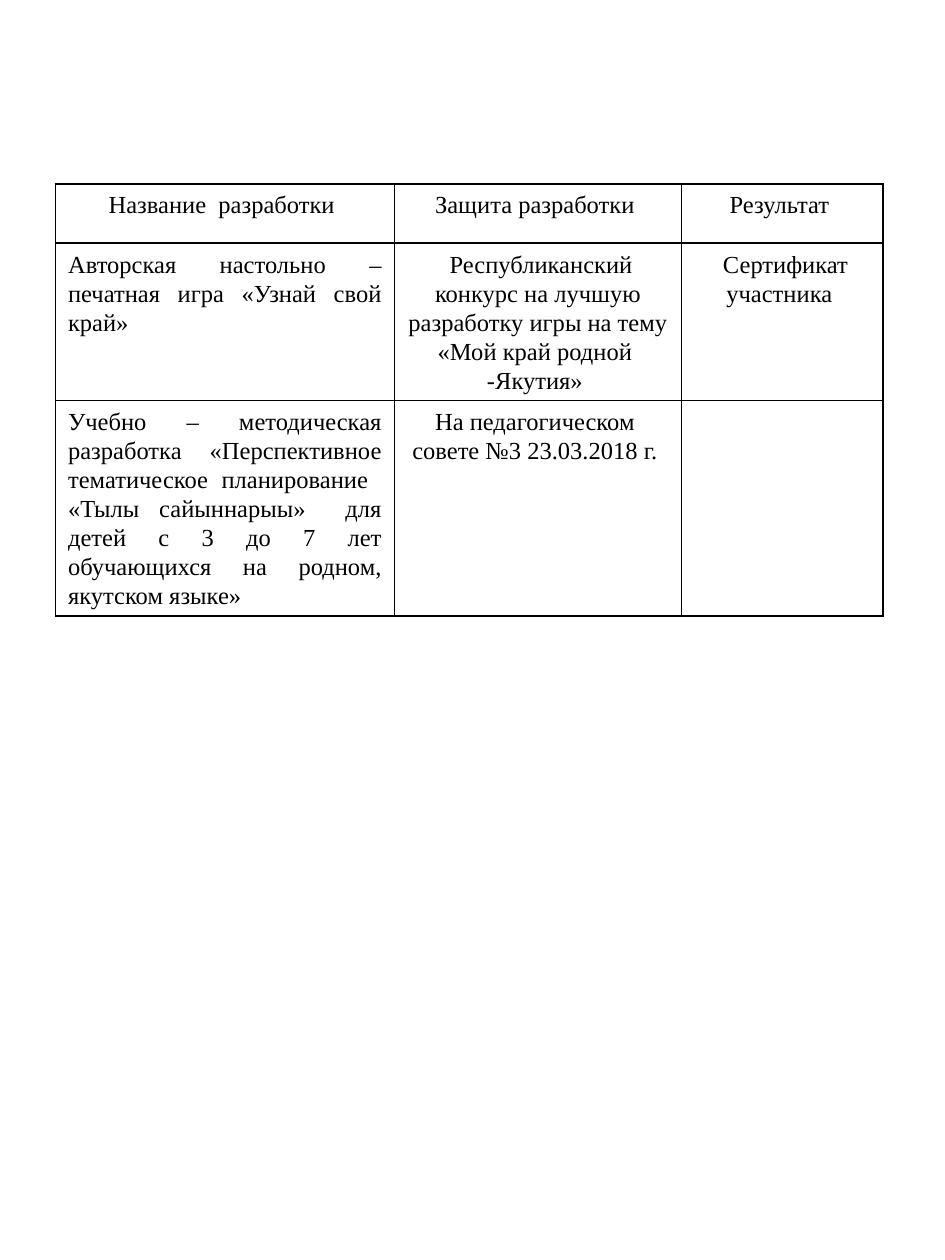
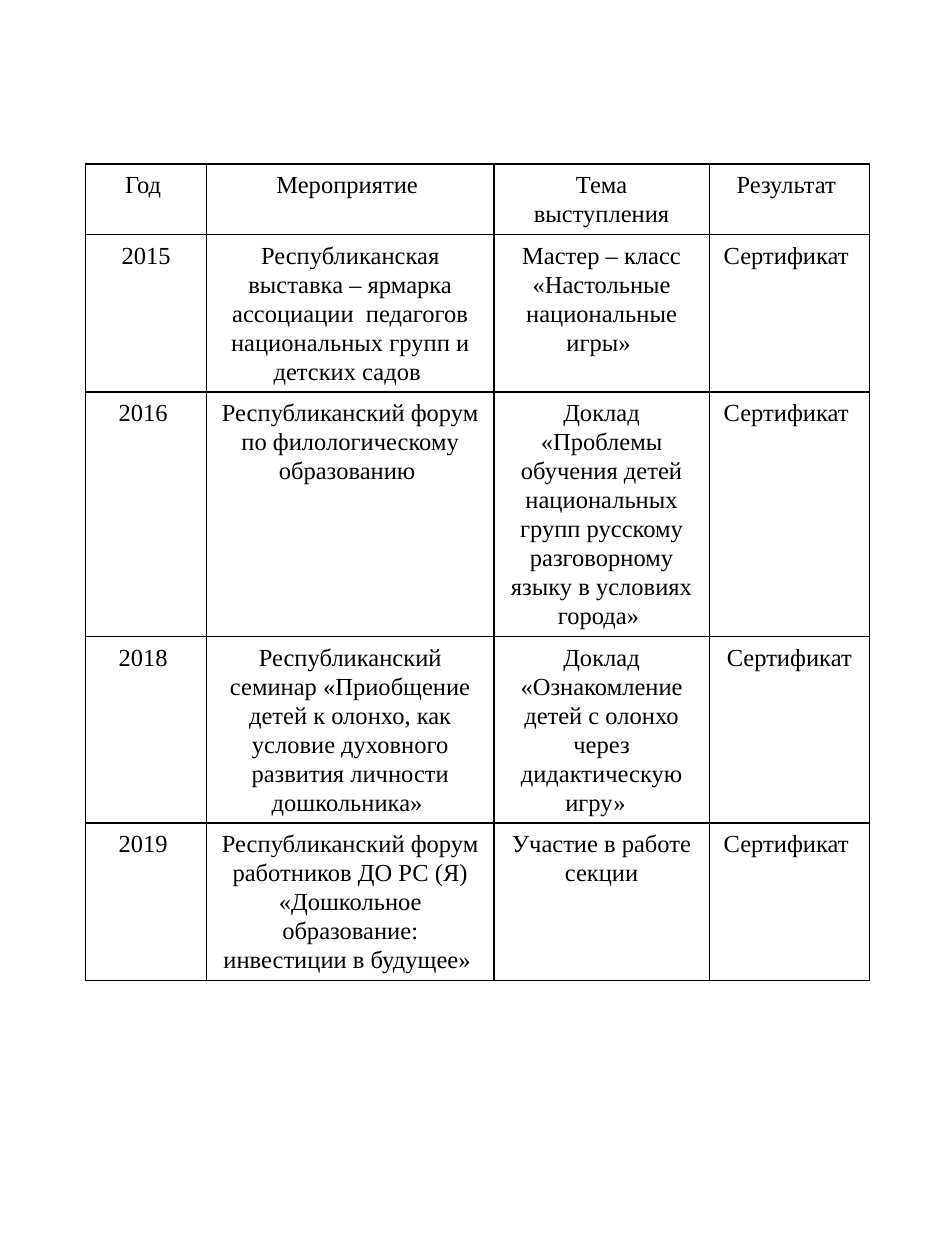
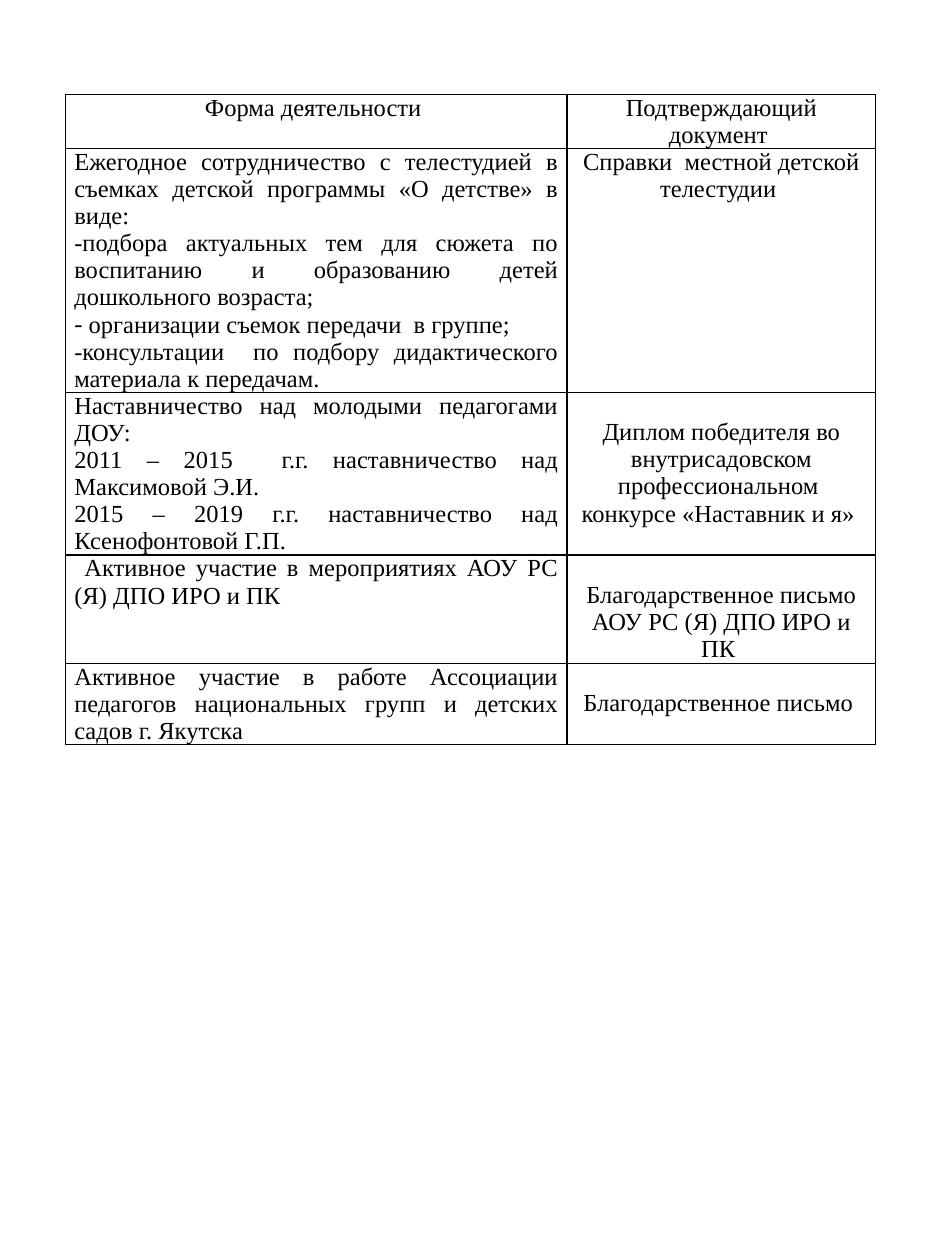
from lxml import etree
from pptx import Presentation
from pptx.dml.color import RGBColor
from pptx.enum.text import PP_ALIGN
from pptx.oxml.ns import qn
from pptx.util import Inches, Pt

CENTER = PP_ALIGN.CENTER
JUSTIFY = PP_ALIGN.JUSTIFY
FONT = "Times New Roman"
BLACK = "000000"
TEXT_SIZE = 14
BORDER_WIDTH = 1
BLANK_LAYOUT = 6
LINE_OFFSET = 0.21

DEVELOPMENTS = [
    ["Название  разработки ", "Защита разработки ", "Результат "],
    ["Авторская настольно – печатная игра «Узнай свой край»",
     " Республиканский конкурс на лучшую разработку игры на тему «Мой край родной  -Якутия» ",
     " Сертификат участника "],
    ["Учебно – методическая разработка  «Перспективное тематическое планирование  "
     "«Тылы сайыннарыы»  для детей с 3 до 7 лет обучающихся на родном, якутском языке» ",
     "На педагогическом  совете №3 23.03.2018 г. ", ""],
]

EVENTS = [
    ["Год ", "Мероприятие ", "Тема выступления", "Результат "],
    ["2015",
     "Республиканская выставка – ярмарка ассоциации  педагогов национальных групп и детских садов ",
     "Мастер – класс «Настольные национальные игры» ", "Сертификат "],
    ["2016 ", "Республиканский форум по филологическому образованию ",
     "Доклад «Проблемы обучения детей национальных групп русскому разговорному языку "
     "в условиях города» ", "Сертификат "],
    ["2018 ",
     "Республиканский семинар «Приобщение детей к олонхо, как условие духовного развития "
     "личности дошкольника» ",
     "Доклад «Ознакомление детей с олонхо через дидактическую игру»  ", "Сертификат"],
    ["2019 ",
     "Республиканский форум работников ДО РС (Я) «Дошкольное образование: инвестиции в будущее» ",
     "Участие в работе секции", "Сертификат "],
]

ACTIVITIES = [
    ["Форма деятельности ", "Подтверждающий документ "],
    ["Ежегодное сотрудничество с телестудией в съемках детской программы «О детстве» в виде: \n"
     "-подбора актуальных тем для сюжета по воспитанию и образованию детей дошкольного возраста;\n"
     "- организации съемок передачи  в группе;\n"
     "-консультации  по подбору дидактического материала к передачам.  ",
     "Справки  местной детской телестудии "],
    ["Наставничество над молодыми педагогами ДОУ:\n"
     "2011 – 2015  г.г. наставничество над Максимовой Э.И. \n"
     "2015 – 2019 г.г. наставничество над Ксенофонтовой Г.П.",
     "Диплом победителя во внутрисадовском профессиональном  конкурсе «Наставник и я» "],
    [" Активное участие в мероприятиях АОУ РС (Я) ДПО ИРО и ПК  ",
     "Благодарственное письмо АОУ РС (Я) ДПО ИРО и ПК "],
    ["Активное участие в работе Ассоциации педагогов национальных групп и детских садов г. Якутска ",
     "Благодарственное письмо "],
]


def rgb(color):
    """Turn a hex string into a colour."""
    return RGBColor.from_string(color)


def set_borders(cell, color=BLACK):
    """Draw a solid line on all four sides of a cell."""
    tc_pr = cell._tc.get_or_add_tcPr()
    for i, side in enumerate(("a:lnL", "a:lnR", "a:lnT", "a:lnB")):
        ln = etree.Element(qn(side), w=str(Pt(BORDER_WIDTH)))
        fill = etree.SubElement(ln, qn("a:solidFill"))
        etree.SubElement(fill, qn("a:srgbClr"), val=color)
        tc_pr.insert(i, ln)


def set_dash_bullet(p):
    """Give a paragraph a dash bullet without an indent."""
    p_pr = p._p.get_or_add_pPr()
    p_pr.set("marL", "0")
    p_pr.set("indent", "0")
    etree.SubElement(p_pr, qn("a:buFont"), typeface=FONT)
    etree.SubElement(p_pr, qn("a:buChar"), char="-")


def write_cell(cell, text, align, line_spacing, space_after):
    """Write one paragraph per line; a leading dash becomes a bullet."""
    tf = cell.text_frame
    for i, line in enumerate(text.split("\n")):
        p = tf.add_paragraph() if i else tf.paragraphs[0]
        p.alignment = align
        p.line_spacing = line_spacing
        p.space_after = Pt(space_after)
        if line.startswith("-"):
            set_dash_bullet(p)
            line = line[1:]
        r = p.add_run()
        r.text = line
        r.font.name = FONT
        r.font.size = Pt(TEXT_SIZE)
        r.font.color.rgb = rgb(BLACK)


def add_grid(prs, rows, left, top, widths, heights, justify_first=True,
             line_spacing=1.07, space_after=8):
    """Add a slide with one plain bordered table and return the table."""
    slide = prs.slides.add_slide(prs.slide_layouts[BLANK_LAYOUT])
    table = slide.shapes.add_table(
        len(rows), len(widths), Inches(left), Inches(top),
        Inches(sum(widths)), Inches(sum(heights))).table
    table.first_row = table.horz_banding = False
    for column, width in zip(table.columns, widths):
        column.width = Inches(width)
    for i, (row, height) in enumerate(zip(rows, heights)):
        table.rows[i].height = Inches(height)
        for j, text in enumerate(row):
            cell = table.cell(i, j)
            cell.fill.background()
            set_borders(cell)
            align = JUSTIFY if justify_first and i and j == 0 else CENTER
            if text:
                write_cell(cell, text, align, line_spacing, space_after)
    return table


def set_tight_margins(table):
    """Narrow the cell margins and start the last documents one line lower."""
    for cell in table.iter_cells():
        cell.margin_left = cell.margin_right = Inches(0.07)
        cell.margin_top = cell.margin_bottom = 0
    for i in range(2, len(table.rows)):
        table.cell(i, 1).margin_top = Inches(LINE_OFFSET)


def main():
    """Build the three table slides."""
    prs = Presentation()
    prs.slide_width, prs.slide_height = Inches(7.5), Inches(10)
    add_grid(prs, DEVELOPMENTS, 0.44, 1.46, [2.69, 2.28, 1.6], [0.47, 1.25, 1.71])
    add_grid(prs, EVENTS, 0.68, 1.3, [0.96, 2.28, 1.71, 1.27],
             [0.56, 1.25, 1.94, 1.48, 1.25], justify_first=False)
    activities = add_grid(prs, ACTIVITIES, 0.52, 0.75, [3.98, 2.45],
                          [0.43, 1.93, 1.29, 0.86, 0.64], line_spacing=1, space_after=0)
    set_tight_margins(activities)
    prs.save("out.pptx")


if __name__ == "__main__":
    main()
